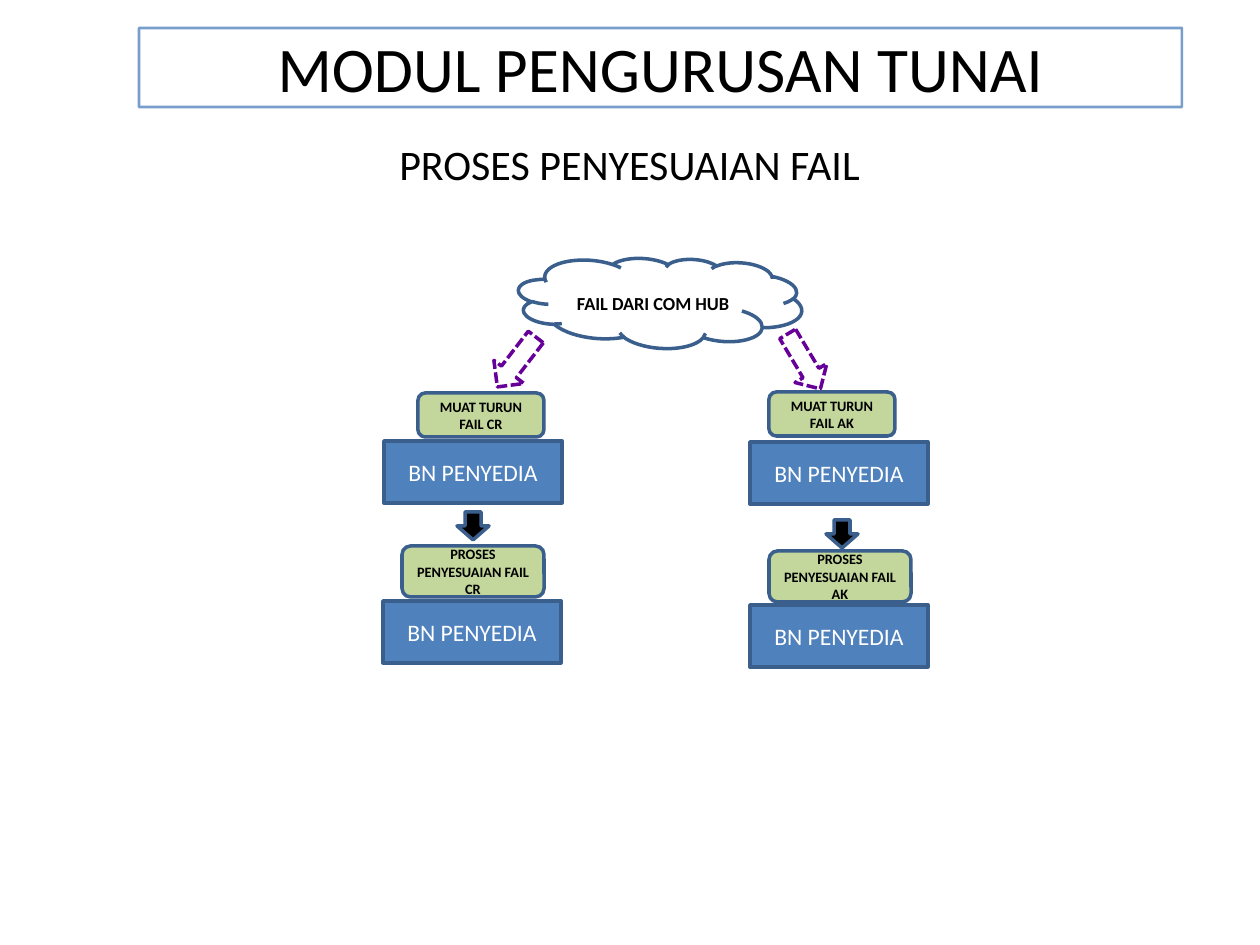
import pptx
import pptx.util
import pptx.dml.color
import pptx.enum.dml
import pptx.enum.shapes
import pptx.enum.text
import pptx.oxml
import pptx.oxml.ns

PX = 914400 / 126
Pt = pptx.util.Pt
RGBColor = pptx.dml.color.RGBColor
Shape = pptx.enum.shapes.MSO_SHAPE
Align = pptx.enum.text.PP_ALIGN
Anchor = pptx.enum.text.MSO_ANCHOR

BLACK = RGBColor(0x00, 0x00, 0x00)
WHITE = RGBColor(0xFF, 0xFF, 0xFF)
BLUE = RGBColor(0x4F, 0x81, 0xBD)
DARK_BLUE = RGBColor(0x3A, 0x5F, 0x8C)
GREEN = RGBColor(0xC3, 0xD6, 0x9B)
PURPLE = RGBColor(0x66, 0x00, 0x99)


def emu(*lengths):
    return [pptx.util.Emu(round(length * PX)) for length in lengths]


def write(box, text, size, color=BLACK, bold=False, align=Align.CENTER,
          anchor=Anchor.MIDDLE):
    frame = box.text_frame
    frame.word_wrap = True
    frame.vertical_anchor = anchor
    frame.margin_left, frame.margin_right = emu(9, 9)
    frame.margin_top, frame.margin_bottom = emu(5, 5)
    para = frame.paragraphs[0]
    para.alignment = align
    span = para.add_run()
    span.text = text
    span.font.name = "Calibri"
    span.font.size = Pt(size)
    span.font.bold = bold
    span.font.color.rgb = color


def add_label(page, place, text, **text_format):
    box = page.shapes.add_textbox(*emu(*place))
    write(box, text, anchor=Anchor.TOP, **text_format)


def add_box(page, kind, place, fill=None, line=DARK_BLUE, width=2, rotation=0):
    box = page.shapes.add_shape(kind, *emu(*place))
    box.shadow.inherit = False
    box.rotation = rotation
    if fill is None:
        box.fill.background()
    else:
        box.fill.solid()
        box.fill.fore_color.rgb = fill
    box.line.color.rgb = line
    box.line.width = Pt(width)
    return box


def add_title(page):
    title = add_box(page, Shape.RECTANGLE, (139, 28, 1043, 79), line=BLUE, width=1.5)
    write(title, "MODUL PENGURUSAN TUNAI", size=36.3)
    color = title.line.fill._xPr.find(".//" + pptx.oxml.ns.qn("a:srgbClr"))
    color.append(pptx.oxml.parse_xml(
        '<a:alpha xmlns:a="http://schemas.openxmlformats.org/drawingml/2006/main"'
        ' val="76000"/>'))


def add_dashed_arrow(page, place, rotation):
    arrow = add_box(page, Shape.RIGHT_ARROW, place, line=PURPLE, rotation=rotation)
    arrow.line.dash_style = pptx.enum.dml.MSO_LINE.SQUARE_DOT


def add_step(page, task, task_place, unit_at):
    """Add a unit box with its green task tag on top."""
    unit = add_box(page, Shape.RECTANGLE, (*unit_at, 178, 62), BLUE)
    write(unit, "BN PENYEDIA", size=13.5, color=WHITE)
    tag = add_box(page, Shape.ROUNDED_RECTANGLE, task_place, GREEN)
    write(tag, task, size=8.2, bold=True)


def add_branch(page, file, load_at, load_unit_at, arrow_at, match_at, match_unit_at):
    add_step(page, f"MUAT TURUN FAIL {file}", (*load_at, 126, 44), load_unit_at)
    add_box(page, Shape.RIGHT_ARROW, (*arrow_at, 28, 32), BLACK, rotation=90)
    add_step(page, f"PROSES PENYESUAIAN FAIL {file}", (*match_at, 142, 51),
             match_unit_at)


def main():
    deck = pptx.Presentation()
    deck.slide_width, deck.slide_height = emu(1260, 945)
    page = deck.slides.add_slide(deck.slide_layouts[6])

    add_label(page, (375, 134, 509, 63), "PROSES PENYESUAIAN FAIL", size=24)
    add_box(page, Shape.CLOUD, (518, 257, 284, 91), rotation=4)
    add_label(page, (568, 287, 181, 35), "FAIL DARI COM HUB", size=10.5,
              bold=True, align=Align.LEFT)
    add_dashed_arrow(page, (772, 343, 64, 37), 59.2)
    add_dashed_arrow(page, (485, 343, 63, 38), 127.6)
    add_branch(page, "AK", (769, 392), (750, 442), (828, 518), (769, 551), (750, 605))
    add_branch(page, "CR", (418, 393), (384, 441), (459, 510), (402, 546), (383, 601))
    add_title(page)
    deck.save("out.pptx")


if __name__ == "__main__":
    main()
